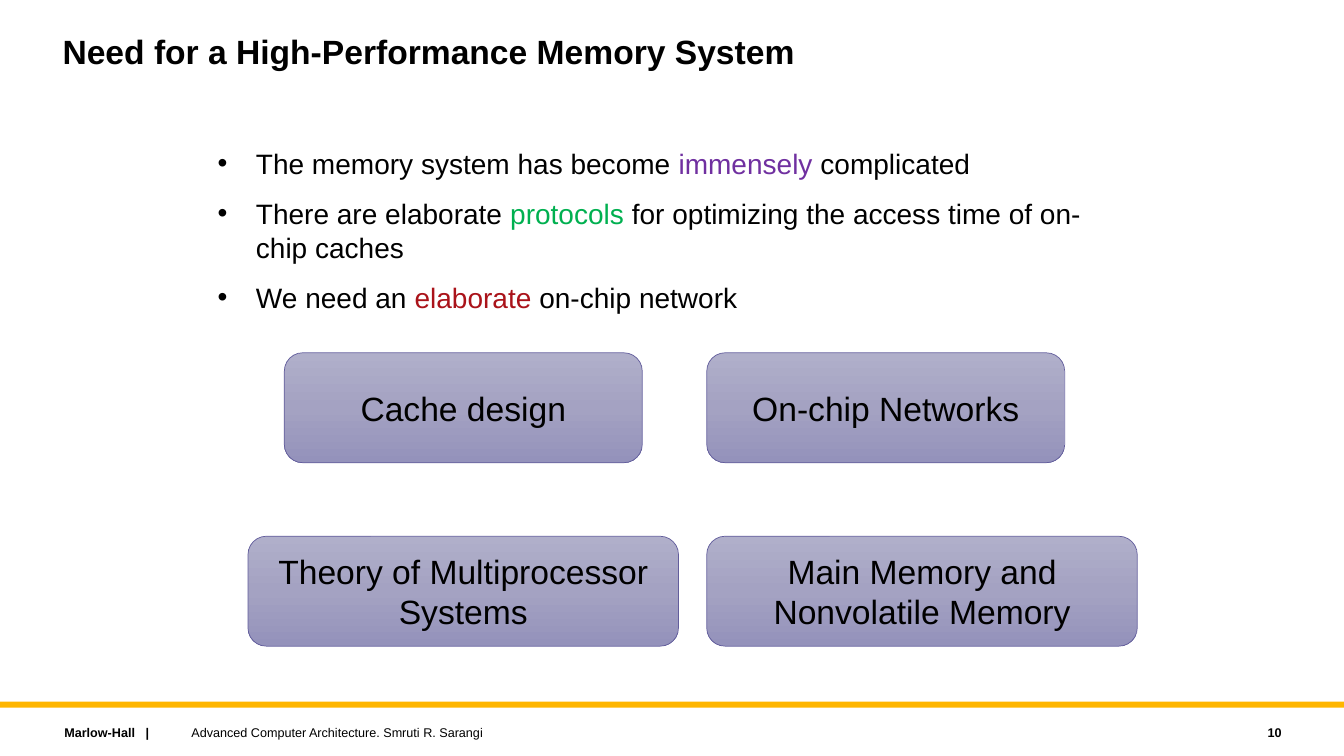
from copy import deepcopy
from typing import NamedTuple

from lxml.etree import SubElement
from pptx import Presentation
from pptx.dml.color import RGBColor
from pptx.enum.shapes import MSO_SHAPE
from pptx.enum.text import MSO_ANCHOR, PP_ALIGN
from pptx.oxml.ns import qn
from pptx.util import Inches, Pt

BLACK = RGBColor(0x00, 0x00, 0x00)
GOLD = RGBColor(0xFF, 0xB6, 0x00)
PURPLE = RGBColor(0x70, 0x30, 0xA0)
GREEN = RGBColor(0x00, 0xB0, 0x50)
RED = RGBColor(0xAA, 0x13, 0x1A)
EDGE = RGBColor(0x62, 0x5D, 0x9C)
SHADES = (RGBColor(0xB0, 0xAF, 0xCA), RGBColor(0xA4, 0xA2, 0xC2),
          RGBColor(0x94, 0x92, 0xBB))


class Point(NamedTuple):
    before: str
    key: str
    after: str
    color: RGBColor


class Topic(NamedTuple):
    text: str
    left: float
    top: float
    width: float


class Label(NamedTuple):
    text: str
    left: float
    width: float
    bold: bool
    align: PP_ALIGN


POINTS = (
    Point("The memory system has become ", "immensely", " complicated", PURPLE),
    Point("There are elaborate ", "protocols",
          " for optimizing the access time of on-chip caches", GREEN),
    Point("We need an ", "elaborate", " on-chip network", RED),
)
ROWS = (3.5, 5.32)
TOPICS = (
    Topic("Cache design", 2.82, ROWS[0], 3.55),
    Topic("On-chip Networks", 7.01, ROWS[0], 3.55),
    Topic("Theory of Multiprocessor Systems", 2.46, ROWS[1], 4.27),
    Topic("Main Memory and Nonvolatile Memory", 7.01, ROWS[1], 4.27),
)
LABELS = (
    Label("Marlow-Hall   |", 0.54, 2.27, True, PP_ALIGN.LEFT),
    Label("10", 11.41, 1.4, True, PP_ALIGN.RIGHT),
    Label("Advanced Computer Architecture. Smruti R. Sarangi", 1.8, 8, False,
          PP_ALIGN.LEFT),
)


def style(para, size: float, bold: bool = False,
          align: PP_ALIGN = PP_ALIGN.LEFT) -> None:
    para.alignment = align
    font = para.font
    font.name, font.size, font.bold = "Arial", Pt(size), bold
    font.color.rgb = BLACK


def add_title(slide) -> None:
    title = slide.shapes.title
    title.left, title.top = Inches(0.52), Inches(0.3)
    title.width, title.height = Inches(10.17), Inches(0.9)
    frame = title.text_frame
    frame.text = "Need for a High-Performance Memory System"
    frame.vertical_anchor = MSO_ANCHOR.TOP
    frame.paragraphs[0].line_spacing = 0.9
    style(frame.paragraphs[0], 24, True)


def add_point(para, point: Point) -> None:
    props = para._p.get_or_add_pPr()
    props.set("marL", str(Inches(0.38)))
    props.set("indent", str(-Inches(0.38)))
    SubElement(props, qn("a:buFont"), typeface="Arial")
    SubElement(props, qn("a:buChar"), char="•")
    style(para, 20)
    for text in (point.before, point.key, point.after):
        run = para.add_run()
        run.text = text
        if text == point.key:
            run.font.color.rgb = point.color


def add_points(slide) -> None:
    box = slide.shapes.add_textbox(Inches(2.06), Inches(1.4),
                                   Inches(9.22), Inches(2.1))
    frame = box.text_frame
    frame.word_wrap = True
    for i, point in enumerate(POINTS):
        para = frame.add_paragraph() if i else frame.paragraphs[0]
        add_point(para, point)
        if i:
            para.space_before = Pt(12)


def add_topic(slide, topic: Topic) -> None:
    box = slide.shapes.add_shape(
        MSO_SHAPE.ROUNDED_RECTANGLE, Inches(topic.left), Inches(topic.top),
        Inches(topic.width), Inches(1.09))
    box.shadow.inherit = False
    box.line.color.rgb, box.line.width = EDGE, Pt(0.5)

    # Three-stop gradient from top to bottom
    box.fill.gradient()
    box.fill.gradient_angle = 270
    stops = box.element.find(".//" + qn("a:gsLst"))
    stops.insert(1, deepcopy(stops[0]))
    for i, stop in enumerate(box.fill.gradient_stops):
        stop.position = i / 2
        stop.color.rgb = SHADES[i]

    frame = box.text_frame
    frame.word_wrap = True
    frame.vertical_anchor = MSO_ANCHOR.MIDDLE
    frame.text = topic.text
    style(frame.paragraphs[0], 24, align=PP_ALIGN.CENTER)


def add_label(slide, label: Label) -> None:
    box = slide.shapes.add_textbox(Inches(label.left), Inches(7.14),
                                   Inches(label.width), Inches(0.25))
    frame = box.text_frame
    frame.word_wrap = True
    frame.vertical_anchor = MSO_ANCHOR.MIDDLE
    frame.text = label.text
    style(frame.paragraphs[0], 9, label.bold, label.align)


def main() -> None:
    deck = Presentation()
    deck.slide_width, deck.slide_height = Inches(13.33), Inches(7.5)
    slide = deck.slides.add_slide(deck.slide_layouts[5])

    # Title and bullets
    add_title(slide)
    add_points(slide)

    # Topic boxes
    for topic in TOPICS:
        add_topic(slide, topic)

    # Footer
    bar = slide.shapes.add_shape(MSO_SHAPE.RECTANGLE, 0, Inches(6.96),
                                 deck.slide_width, Inches(0.06))
    bar.shadow.inherit = False
    bar.fill.solid()
    bar.fill.fore_color.rgb = GOLD
    bar.line.fill.background()
    for label in LABELS:
        add_label(slide, label)

    deck.save("out.pptx")


if __name__ == "__main__":
    main()
